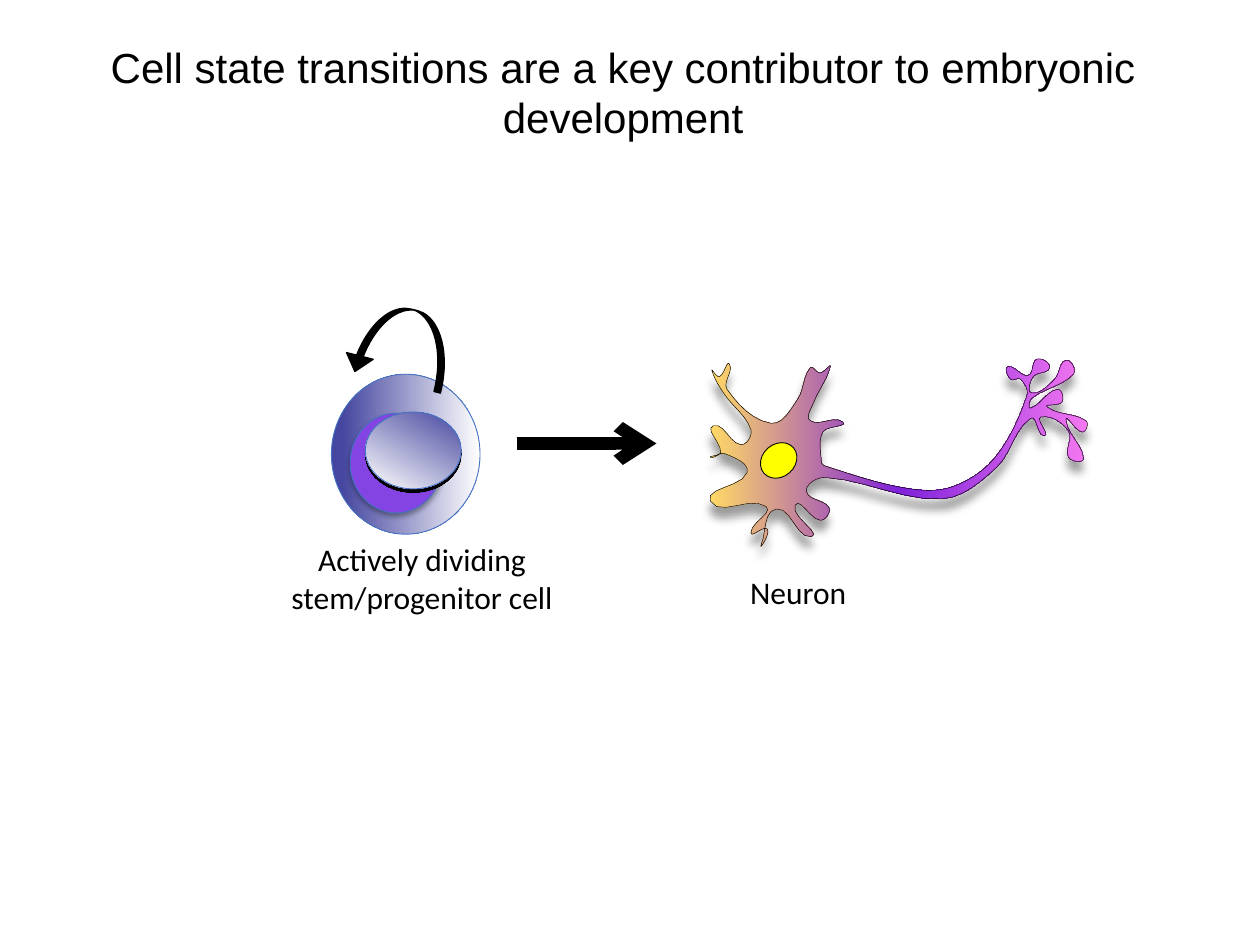
import copy
import math

import lxml.etree
import pptx
import pptx.dml.color
import pptx.enum.shapes
import pptx.enum.text
import pptx.oxml.ns
import pptx.util

Inches = pptx.util.Inches
Pt = pptx.util.Pt
qn = pptx.oxml.ns.qn
SHAPES = pptx.enum.shapes.MSO_SHAPE

COLORS = {
    "black": "000000", "white": "FFFFFF", "indigo": "45469F",
    "outline": "4472C4", "purple": "8444E3", "yellow": "FFFF00",
    "sand": "FFD966", "violet": "8022DA", "pink": "F477F1",
}

# Neuron outline, clockwise from the axon base, in hundredths of an inch
NEURON = [
    # axon, upper edge
    (94, 85), (155, 102), (193, 102), (228, 79), (254, 29),
    # axon terminals
    (249, 16), (241, 16), (239, 6), (255, 13), (262, 0), (272, 7), (259, 14),
    (258, 27), (276, 16), (285, 1), (291, 12), (258, 31), (257, 39), (278, 24),
    (282, 34), (270, 38), (301, 49), (298, 58), (285, 48), (299, 79), (287, 78),
    (287, 57), (265, 46), (268, 61), (257, 47),
    # axon, lower edge
    (230, 86), (187, 111), (94, 94),
    # lower dendrites
    (79, 105), (97, 118), (90, 128), (70, 116), (83, 141), (55, 119), (43, 148),
    (48, 135), (35, 138), (47, 117), (3, 113), (32, 90),
    # left and upper dendrites
    (14, 75), (3, 78), (11, 74), (5, 53), (27, 68), (35, 56), (14, 28), (4, 9),
    (10, 14), (18, 4), (16, 24), (51, 51), (72, 32), (82, 7), (90, 11), (98, 6),
    (85, 34), (82, 49), (108, 50), (92, 58), (91, 82),
]


def rgb(name):
    return pptx.dml.color.RGBColor.from_string(COLORS[name])


def add_text(slide, lines, left, top, width, height, *, size, font, wrap=False):
    box = slide.shapes.add_textbox(Inches(left), Inches(top), Inches(width), Inches(height))
    frame = box.text_frame
    frame.word_wrap = wrap
    frame.auto_size = pptx.enum.text.MSO_AUTO_SIZE.SHAPE_TO_FIT_TEXT
    for index, line in enumerate(lines):
        paragraph = frame.add_paragraph() if index else frame.paragraphs[0]
        paragraph.alignment = pptx.enum.text.PP_ALIGN.CENTER
        run = paragraph.add_run()
        run.text = line
        run.font.size = Pt(size)
        run.font.name = font
        run.font.color.rgb = rgb("black")


def set_gradient(shape, stops, angle):
    shape.fill.gradient()
    shape.fill.gradient_angle = angle
    stop_list = shape._element.spPr.find(qn("a:gradFill")).find(qn("a:gsLst"))
    while len(stop_list) < len(stops):
        stop_list.append(copy.deepcopy(stop_list[0]))
    for stop, (position, color) in zip(shape.fill.gradient_stops, stops):
        stop.position = position
        stop.color.rgb = rgb(color)


def style(shape, *, fill=None, stops=None, angle=0, line="outline", weight=0.5, shadow=None):
    """shadow is (opacity %, blur pt, distance pt, direction in degrees)."""
    if stops:
        set_gradient(shape, stops, angle)
    else:
        shape.fill.solid()
        shape.fill.fore_color.rgb = rgb(fill)
    shape.line.color.rgb = rgb(line)
    shape.line.width = Pt(weight)
    shape.shadow.inherit = False
    if shadow:
        opacity, blur, distance, direction = shadow
        effects = shape._element.spPr.find(qn("a:effectLst"))
        outer = lxml.etree.SubElement(
            effects, qn("a:outerShdw"), blurRad=str(Pt(blur)), dist=str(Pt(distance)),
            dir=str(direction * 60000), algn="ctr", rotWithShape="0")
        color = lxml.etree.SubElement(outer, qn("a:srgbClr"), val=COLORS["black"])
        lxml.etree.SubElement(color, qn("a:alpha"), val=str(opacity * 1000))


def add_shape(slide, kind, left, top, width, height, rotation=0, **look):
    shape = slide.shapes.add_shape(kind, Inches(left), Inches(top), Inches(width), Inches(height))
    shape.rotation = rotation
    style(shape, **look)
    return shape


def smooth(points, steps=6):
    """Closed smooth curve through the points, with tangents scaled to each span."""
    def direction(i):
        (x0, y0), (x1, y1) = points[i - 1], points[(i + 1) % len(points)]
        length = math.hypot(x1 - x0, y1 - y0) or 1
        return (x1 - x0) / length, (y1 - y0) / length

    curve = []
    for i, start in enumerate(points):
        j = (i + 1) % len(points)
        end, reach = points[j], math.dist(start, points[j])
        for t in (step / steps for step in range(steps)):
            curve.append(tuple(
                a * (1 + 2 * t) * (1 - t) ** 2 + b * t * t * (3 - 2 * t)
                + reach * (m * t * (1 - t) ** 2 - n * t * t * (1 - t))
                for a, b, m, n in zip(start, end, direction(i), direction(j))))
    return curve


def add_neuron(slide, left, top):
    outline = [(Inches(left + x / 100), Inches(top + y / 100)) for x, y in smooth(NEURON)]
    builder = slide.shapes.build_freeform(*outline[0])
    builder.add_line_segments(outline[1:], close=True)
    style(builder.convert_to_shape(),
          stops=[(0, "sand"), (0.5, "violet"), (1, "pink")],
          line="black", weight=0.25, shadow=(38, 5.5, 6, 94))
    # Nucleus and label
    add_shape(slide, SHAPES.OVAL, left + 0.44, top + 0.65, 0.26, 0.31, 49.1,
              fill="yellow", line="black")
    add_text(slide, ["Neuron"], left + 0.21, top + 1.65, 1.03, 0.4, size=18, font="Calibri")


def add_stem_cell(slide, left, top):
    # Cell body and the dark part of the nucleus
    add_shape(slide, SHAPES.OVAL, left, top, 1.18, 1.27,
              stops=[(0.07, "indigo"), (1, "white")])
    add_shape(slide, SHAPES.OVAL, left + 0.15, top + 0.31, 0.73, 0.79,
              fill="purple", shadow=(35, 3.1, 1.8, 90))
    # Self-renewal arrow
    renewal = add_shape(slide, SHAPES.CURVED_UP_ARROW, left + 0.14, top - 0.53, 0.81, 0.59,
                        194.2, fill="black", line="black", weight=0)
    for index, value in enumerate((0.09, 0.37, 0.22)):
        renewal.adjustments[index] = value
    add_text(slide, ["Actively dividing", "stem/progenitor cell"],
             left - 0.48, top + 1.27, 2.4, 0.71, size=18, font="Calibri")
    # Raised nucleus with a hard lower edge
    add_shape(slide, SHAPES.OVAL, left + 0.27, top + 0.3, 0.76, 0.61,
              stops=[(0, "indigo"), (0.99, "white")], angle=240, shadow=(100, 0, 2, 90))


def add_transition(slide, left, top, length):
    arrow = slide.shapes.add_connector(
        pptx.enum.shapes.MSO_CONNECTOR.STRAIGHT,
        Inches(left), Inches(top), Inches(left + length), Inches(top))
    arrow.line.color.rgb = rgb("black")
    arrow.line.width = Pt(7)
    properties = arrow._element.spPr
    lxml.etree.SubElement(properties.find(qn("a:ln")), qn("a:tailEnd"), type="arrow")
    lxml.etree.SubElement(properties, qn("a:effectLst"))


def main():
    deck = pptx.Presentation()
    deck.slide_width, deck.slide_height = Inches(10), Inches(7.5)
    slide = deck.slides.add_slide(deck.slide_layouts[6])
    add_transition(slide, 4.1, 3.52, 1.11)
    add_neuron(slide, 5.61, 2.85)
    add_text(slide, ["Cell state transitions are a key contributor to embryonic development"],
             0.24, 0.28, 9.41, 0.91, size=24, font="Arial", wrap=True)
    add_stem_cell(slide, 2.63, 2.97)
    deck.save("out.pptx")


if __name__ == "__main__":
    main()
